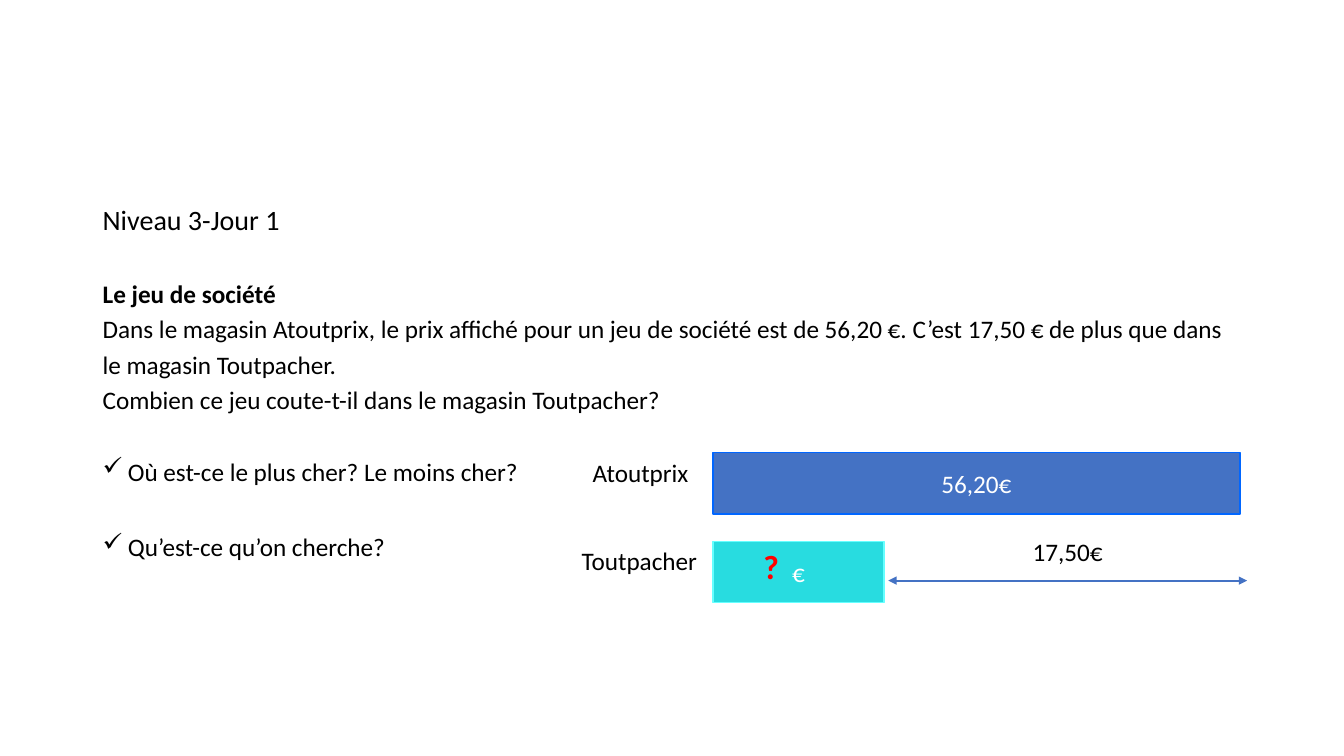
"""Builds a maths problem slide with a bar model comparing two prices."""
import pptx
import pptx.util
import pptx.dml.color
import pptx.enum.shapes
import pptx.enum.text
import pptx.oxml
import pptx.oxml.ns

Inches = pptx.util.Inches
Pt = pptx.util.Pt
ALIGN = pptx.enum.text.PP_ALIGN
HUES = {
    "ink": "000000", "white": "FFFFFF", "red": "FF0000",
    "blue": "4472C4", "edge": "0066FF",
    "cyan": "28DCE0", "glow": "66FFFF",
}


class Deck:
    def __init__(self):
        self.prs = pptx.Presentation()
        self.prs.slide_width = Inches(13.33)
        self.prs.slide_height = Inches(7.5)
        self.slide = self.prs.slides.add_slide(self.prs.slide_layouts[6])
        self.font = "Calibri"

    def hue(self, name):
        return pptx.dml.color.RGBColor.from_string(HUES[name])

    def node(self, parent, tag, **attrs):
        item = pptx.oxml.parse_xml(
            f"<a:{tag} {pptx.oxml.ns.nsdecls('a')}/>")
        for key, value in attrs.items():
            item.set(key, value)
        parent.append(item)

    def run(self, para, text, size=18, hue="ink", bold=False):
        run = para.add_run()
        run.text = text
        run.font.name = self.font
        run.font.size = Pt(size)
        run.font.bold = bold
        run.font.color.rgb = self.hue(hue)

    def box(self, left, top, width, height):
        shape = self.slide.shapes.add_textbox(
            Inches(left), Inches(top), Inches(width), Inches(height))
        shape.text_frame.word_wrap = True
        return shape.text_frame

    def label(self, text, left, top, width, height=0.4, align=ALIGN.LEFT,
              **style):
        frame = self.box(left, top, width, height)
        frame.auto_size = pptx.enum.text.MSO_AUTO_SIZE.SHAPE_TO_FIT_TEXT
        para = frame.paragraphs[0]
        para.alignment = align
        self.run(para, text, **style)

    def body(self, rows, left, top, width, height):
        frame = self.box(left, top, width, height)
        for index, (text, size, bold, space, gap, tick) in enumerate(rows):
            para = frame.add_paragraph() if index else frame.paragraphs[0]
            para.line_spacing = space
            para.space_before = Pt(gap)
            if tick:
                props = para._p.get_or_add_pPr()
                props.set("marL", str(Inches(0.25)))
                props.set("indent", str(Inches(-0.25)))
                self.node(props, "buChar", char="✓")
            self.run(para, text, size, bold=bold)

    def bar(self, text, left, top, width, height, fill, edge):
        shape = self.slide.shapes.add_shape(
            pptx.enum.shapes.MSO_SHAPE.RECTANGLE,
            Inches(left), Inches(top), Inches(width), Inches(height))
        shape.shadow.inherit = False
        shape.fill.solid()
        shape.fill.fore_color.rgb = self.hue(fill)
        shape.line.color.rgb = self.hue(edge)
        shape.line.width = Pt(1)
        frame = shape.text_frame
        frame.vertical_anchor = pptx.enum.text.MSO_ANCHOR.MIDDLE
        para = frame.paragraphs[0]
        para.alignment = ALIGN.CENTER
        self.run(para, text, hue="white")

    def arrow(self, left, right, top):
        line = self.slide.shapes.add_connector(
            pptx.enum.shapes.MSO_CONNECTOR.STRAIGHT,
            Inches(left), Inches(top), Inches(right), Inches(top))
        line.line.color.rgb = self.hue("blue")
        line.line.width = Pt(1.5)
        for end in ("headEnd", "tailEnd"):
            self.node(line.line._get_or_add_ln(), end, type="triangle")
        self.node(line._element.spPr, "effectLst")


def main():
    deck = Deck()
    deck.body([
        ("Niveau 3-Jour 1", 20, False, 0.9, 10, False),
        ("Le jeu de société", 18, True, 1.17, 26, False),
        ("Dans le magasin Atoutprix, le prix affiché pour un jeu de société "
         "est de 56,20 €. C’est 17,50 € de plus que dans le magasin "
         "Toutpacher.", 18, False, 1.17, 0, False),
        ("Combien ce jeu coute-t-il dans le magasin Toutpacher?",
         18, False, 1.17, 0, False),
        ("Où est-ce le plus cher? Le moins cher?", 18, False, 1.07, 28, True),
        ("Qu’est-ce qu’on cherche?", 18, False, 1.07, 31, True),
    ], 0.92, 2, 11.5, 4.76)
    deck.bar("56,20€", 7.07, 4.49, 5.23, 0.61, "blue", "edge")
    deck.bar("€", 7.07, 5.37, 1.7, 0.61, "cyan", "glow")
    deck.label("Atoutprix", 5.78, 4.49, 1.3)
    deck.label("Toutpacher", 5.67, 5.36, 1.4)
    deck.arrow(8.81, 12.37, 5.76)
    deck.label("?", 7.38, 5.37, 0.54, 0.5, ALIGN.CENTER,
               size=24, hue="red", bold=True)
    deck.label("17,50€", 9.68, 5.27, 1.82, align=ALIGN.CENTER)
    deck.prs.save("out.pptx")


if __name__ == "__main__":
    main()
